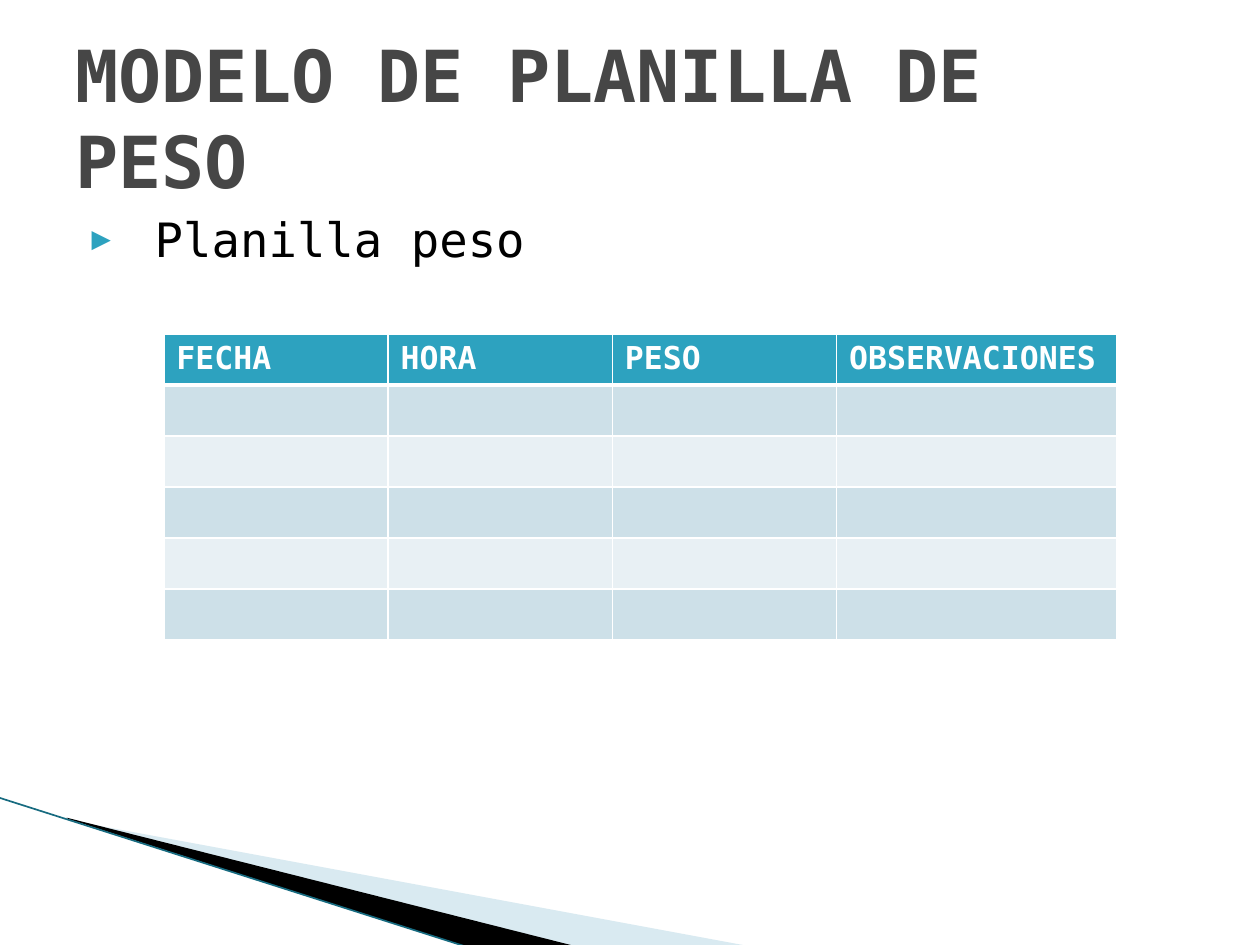
from dataclasses import dataclass
from typing import Any

from lxml import etree
from pptx import Presentation
from pptx import util as u
from pptx.dml.color import RGBColor
from pptx.enum import shapes, text
from pptx.oxml import ns


@dataclass(frozen=True)
class Theme:
    font: str = "DejaVu Sans Mono"
    title_size: int = 41
    body_size: int = 27
    table_size: int = 18
    title: str = "464646"
    ink: str = "000000"
    accent: str = "2DA2BF"
    wedge: str = "A0CBDC"
    edge: str = "176B80"
    white: str = "FFFFFF"
    bands: tuple[str, str] = ("CDE0E8", "E8F0F4")


@dataclass(frozen=True)
class Wedge:
    frame: tuple[float, float, float, float]
    points: tuple[tuple[float, float], ...]
    color: str
    opacity: int


@dataclass(frozen=True)
class TextBlock:
    words: str
    box: tuple[float, float, float, float]
    anchor: text.MSO_ANCHOR
    size: int
    color: str
    bold: bool = False
    bulleted: bool = False


THEME = Theme()
WEDGES = (
    Wedge((0.78, 5.47, 4.16, 1.58),
          ((0.55, 6.51), (5.95, 7.51), (4.56, 7.51), (0.55, 6.5)), THEME.wedge, 40),
    Wedge((-0.06, 6.33, 4.16, 0.92),
          ((0.53, 6.49), (4.57, 7.51), (3.72, 7.52), (0.54, 6.5)), THEME.ink, 100),
)
TEXT_BLOCKS = (
    TextBlock("Planilla peso", (0.5, 1.62, 9, 4.95), text.MSO_ANCHOR.TOP,
              THEME.body_size, THEME.ink, bulleted=True),
    TextBlock("MODELO DE PLANILLA DE PESO", (0.5, 0.3, 9, 1.25), text.MSO_ANCHOR.MIDDLE,
              THEME.title_size, THEME.title, bold=True),
)
HEADINGS = ("FECHA", "HORA", "PESO", "OBSERVACIONES")
COLUMN_WIDTHS = (1.78, 1.78, 1.78, 2.22)
ROW_COUNT = 6
TABLE_HEIGHT = 2.43


def rgb(color: str) -> RGBColor:
    return RGBColor.from_string(color)


def add_child(parent: Any, tag: str, **attributes: str) -> Any:
    return etree.SubElement(parent, ns.qn(tag), attributes)


def style_font(font: Any, size: int, color: str, bold: bool) -> None:
    for attribute, value in {"name": THEME.font, "size": u.Pt(size), "bold": bold}.items():
        setattr(font, attribute, value)
    font.color.rgb = rgb(color)


def reframe(ray: Any, frame: tuple[float, float, float, float]) -> None:
    left, top, width, height = map(u.Inches, frame)
    shift = {"x": ray.left - left, "y": ray.top - top}
    for outline in ray._element.iter(ns.qn("a:path")):
        outline.set("w", str(width))
        outline.set("h", str(height))
        for point in outline.iter(ns.qn("a:pt")):
            for axis, offset in shift.items():
                point.set(axis, str(int(point.get(axis)) + offset))
    for attribute, value in {"left": left, "top": top, "width": width, "height": height}.items():
        setattr(ray, attribute, value)


def draw_wedge(slide: Any, wedge: Wedge) -> None:
    start, *rest = [(u.Inches(x), u.Inches(y)) for x, y in wedge.points]
    builder = slide.shapes.build_freeform(*start)
    builder.add_line_segments(rest)
    ray = builder.convert_to_shape()
    reframe(ray, wedge.frame)
    ray.shadow.inherit = False
    ray.line.fill.background()
    ray.fill.solid()
    ray.fill.fore_color.rgb = rgb(wedge.color)
    if wedge.opacity < 100:
        tint = ray.fill._xPr.find(ns.qn("a:solidFill"))[0]
        add_child(tint, "a:alpha", val=str(wedge.opacity * 1000))


def draw_edge(slide: Any) -> None:
    ends = [u.Inches(value) for value in (-0.01, 6.33, 3.72, 7.52)]
    edge = slide.shapes.add_connector(shapes.MSO_CONNECTOR.STRAIGHT, *ends)
    edge.line.color.rgb = rgb(THEME.edge)
    edge.line.width = u.Pt(0.95)
    add_child(edge._element.spPr, "a:effectLst")


def add_bullet(paragraph: Any) -> None:
    properties = paragraph._p.get_or_add_pPr()
    properties.set("marL", str(u.Inches(0.63)))
    properties.set("indent", str(u.Inches(-0.5)))
    add_child(add_child(properties, "a:buClr"), "a:srgbClr", val=THEME.accent)
    add_child(properties, "a:buSzPct", val="68000")
    add_child(properties, "a:buFont", typeface=THEME.font)
    add_child(properties, "a:buChar", char="▶")


def draw_text(slide: Any, block: TextBlock) -> None:
    frame = slide.shapes.add_textbox(*map(u.Inches, block.box)).text_frame
    for attribute, value in {"word_wrap": True, "vertical_anchor": block.anchor}.items():
        setattr(frame, attribute, value)
    paragraph = frame.paragraphs[0]
    if block.bulleted:
        add_bullet(paragraph)
    run = paragraph.add_run()
    run.text = block.words
    style_font(run.font, block.size, block.color, block.bold)


def style_cell(cell: Any, fill: str, top: int, bottom: int) -> None:
    properties = cell._tc.get_or_add_tcPr()
    for side, width in {"L": 1, "R": 1, "T": top, "B": bottom}.items():
        border = add_child(properties, f"a:ln{side}", w=str(u.Pt(width)))
        add_child(add_child(border, "a:solidFill"), "a:srgbClr", val=THEME.white)
    cell.fill.solid()
    cell.fill.fore_color.rgb = rgb(fill)


def draw_weight_table(slide: Any) -> None:
    table = slide.shapes.add_table(
        ROW_COUNT, len(HEADINGS), u.Inches(1.3), u.Inches(2.65),
        u.Inches(sum(COLUMN_WIDTHS)), u.Inches(TABLE_HEIGHT)).table
    for column, width in zip(table.columns, COLUMN_WIDTHS):
        column.width = u.Inches(width)
    for index, row in enumerate(table.rows):
        fill = THEME.bands[(index - 1) % 2] if index else THEME.accent
        for cell in row.cells:
            style_cell(cell, fill, 3 if index == 1 else 1, 1 if index else 3)
    for cell, heading in zip(table.rows[0].cells, HEADINGS):
        run = cell.text_frame.paragraphs[0].add_run()
        run.text = heading
        style_font(run.font, THEME.table_size, THEME.white, True)


def main() -> None:
    deck = Presentation()
    deck.slide_width, deck.slide_height = u.Inches(10), u.Inches(7.5)
    slide = deck.slides.add_slide(deck.slide_layouts[6])
    for wedge in WEDGES:
        draw_wedge(slide, wedge)
    draw_edge(slide)
    for block in TEXT_BLOCKS:
        draw_text(slide, block)
    draw_weight_table(slide)
    deck.save("out.pptx")


if __name__ == "__main__":
    main()
